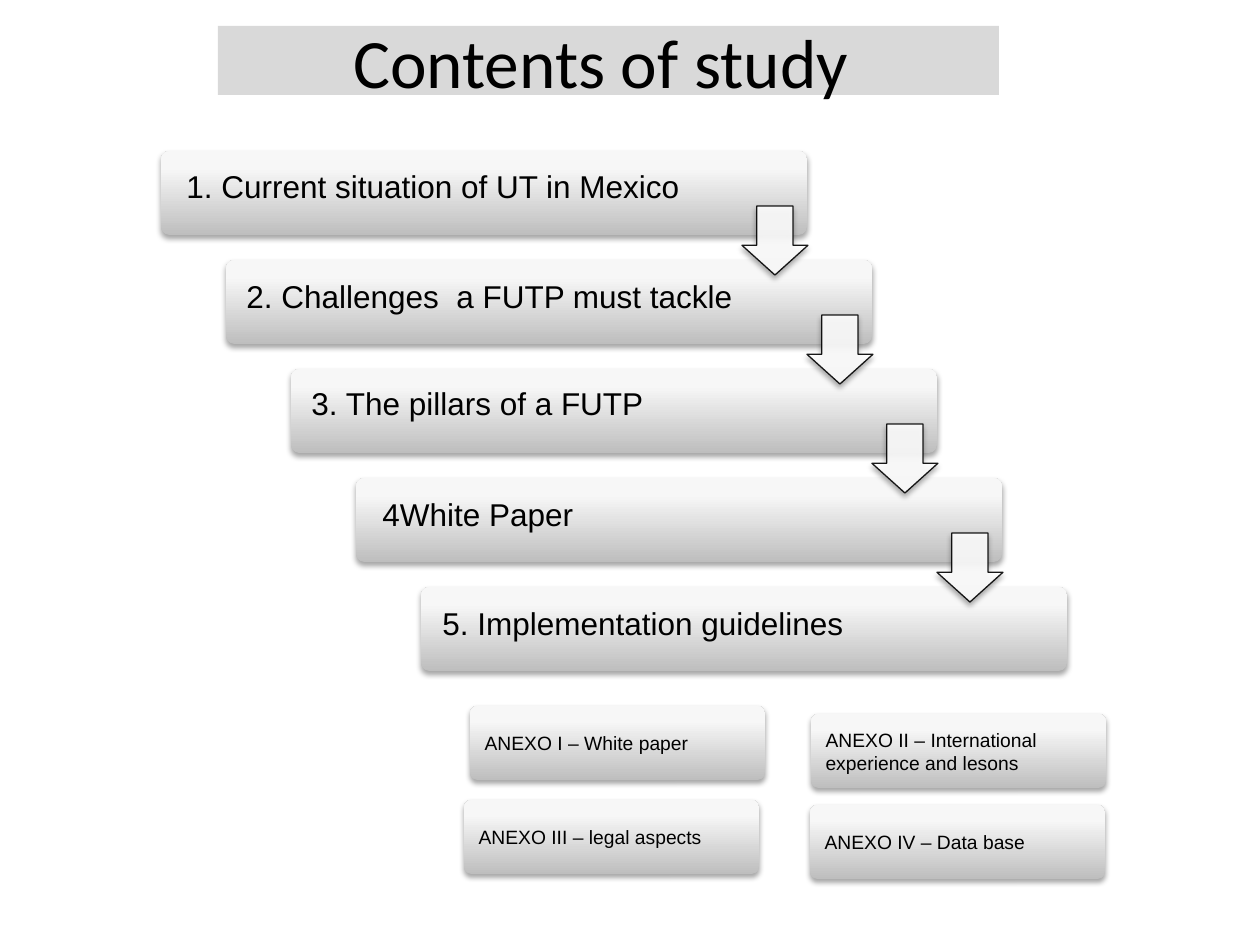
import pptx
import pptx.dml.color
import pptx.enum.shapes
import pptx.enum.text
import pptx.oxml
import pptx.oxml.ns
import pptx.util
from dataclasses import dataclass

SHAPE = pptx.enum.shapes.MSO_SHAPE
ALIGN = pptx.enum.text.PP_ALIGN
ANCHOR = pptx.enum.text.MSO_ANCHOR
EMU_PER_PX = 914400 / 126
NAMESPACE = pptx.oxml.ns.nsdecls("a")


@dataclass(frozen=True)
class Theme:
    ink: str = "000000"
    paper: str = "FFFFFF"
    title_fill: str = "D9D9D9"
    bar_stops: tuple = ((0, "BEBEBE"), (80, "F7F7F7"), (100, "F8F8F8"))
    arrow_opacity: int = 90
    shadow_opacity: int = 35
    title_font: str = "Calibri"
    body_font: str = "Arial"
    title_size: float = 39.6
    step_size: int = 18
    annex_size: int = 11


def px(length):
    return pptx.util.Emu(round(length * EMU_PER_PX))


def color(value):
    return pptx.dml.color.RGBColor.from_string(value)


class SlideBuilder:
    def __init__(self, page, theme):
        self.page = page
        self.theme = theme

    def shape(self, kind, left, top, width, height):
        shape = self.page.shapes.add_shape(kind, px(left), px(top), px(width), px(height))
        shape.line.fill.background()
        shape.shadow.inherit = False
        return shape

    def set_text(self, shape, text, size, font, align=ALIGN.LEFT, anchor=ANCHOR.MIDDLE):
        frame = shape.text_frame
        frame.word_wrap = True
        frame.vertical_anchor = anchor
        frame.text = text
        para = frame.paragraphs[0]
        para.alignment = align
        for span in para.runs:
            span.font.size = pptx.util.Pt(size)
            span.font.name = font
            span.font.color.rgb = color(self.theme.ink)

    def drop_shadow(self, shape):
        effects = shape.element.spPr.find(pptx.oxml.ns.qn("a:effectLst"))
        effects.append(pptx.oxml.parse_xml(
            f'<a:outerShdw {NAMESPACE} blurRad="{pptx.util.Pt(3.1)}" dist="{pptx.util.Pt(1.8)}" '
            f'dir="5400000" rotWithShape="0"><a:srgbClr val="{self.theme.ink}">'
            f'<a:alpha val="{self.theme.shadow_opacity * 1000}"/></a:srgbClr></a:outerShdw>'))

    def title(self, text, left, top, width, height):
        box = self.shape(SHAPE.RECTANGLE, left, top, width, height)
        box.fill.solid()
        box.fill.fore_color.rgb = color(self.theme.title_fill)
        self.set_text(box, text, self.theme.title_size, self.theme.title_font, ALIGN.CENTER)

    def bar(self, left, top, width, height):
        bar = self.shape(SHAPE.ROUNDED_RECTANGLE, left, top, width, height)
        bar.adjustments[0] = 0.1
        stops = "".join(f'<a:gs pos="{position * 1000}"><a:srgbClr val="{value}"/></a:gs>'
                        for position, value in self.theme.bar_stops)
        # The fill follows the transform and the geometry
        bar.element.spPr.insert(2, pptx.oxml.parse_xml(
            f'<a:gradFill {NAMESPACE} rotWithShape="1"><a:gsLst>{stops}</a:gsLst>'
            f'<a:lin ang="16200000" scaled="0"/></a:gradFill>'))
        self.drop_shadow(bar)
        return bar

    def arrow(self, left, top, width, height):
        arrow = self.shape(SHAPE.DOWN_ARROW, left, top, width, height)
        arrow.adjustments[0] = 0.55
        arrow.adjustments[1] = 0.45
        arrow.fill.solid()
        arrow.fill.fore_color.rgb = color(self.theme.paper)
        arrow.line.color.rgb = color(self.theme.ink)
        arrow.line.width = pptx.util.Pt(0.75)
        for tint in arrow.element.spPr.iter(pptx.oxml.ns.qn("a:srgbClr")):
            tint.append(pptx.oxml.parse_xml(
                f'<a:alpha {NAMESPACE} val="{self.theme.arrow_opacity * 1000}"/>'))
        self.drop_shadow(arrow)

    def label(self, text, left, top, width, height):
        box = self.page.shapes.add_textbox(px(left), px(top), px(width), px(height))
        self.set_text(box, text, self.theme.step_size, self.theme.body_font, anchor=ANCHOR.TOP)

    def annex(self, text, left, top):
        bar = self.bar(left, top, 295, 74)
        self.set_text(bar, text, self.theme.annex_size, self.theme.body_font)


# Step text with its label's left, top and width
STEPS = [
    ("1. Current situation of UT in Mexico", 174, 161, 630),
    ("2. Challenges  a FUTP must tackle", 234, 271, 568),
    ("3. The pillars of a FUTP", 299, 378, 522),
    ("4White Paper", 370, 489, 630),
    ("5. Implementation guidelines", 430, 598, 606),
]
ANNEXES = [
    ("ANEXO I – White paper", 470, 706),
    ("ANEXO II – International experience and lesons", 811, 714),
    ("ANEXO III – legal aspects", 464, 800),
    ("ANEXO IV – Data base", 810, 805),
]
STEP_RIGHT, STEP_DOWN = 65, 109


def main():
    deck = pptx.Presentation()
    deck.slide_width, deck.slide_height = px(1260), px(945)
    builder = SlideBuilder(deck.slides.add_slide(deck.slide_layouts[6]), Theme())

    builder.title("Contents of study ", 218, 26, 781, 69)

    # Staircase, drawn from the last step so each arrow overlaps the next bar
    for index, (text, left, top, width) in reversed(list(enumerate(STEPS))):
        right, down = index * STEP_RIGHT, index * STEP_DOWN
        builder.bar(161 + right, 151 + down, 646, 84)
        if index < len(STEPS) - 1:
            builder.arrow(742 + right, 206 + down, 66, 69)
        builder.label(text, left, top, width, 50)

    # Annexes
    for text, left, top in ANNEXES:
        builder.annex(text, left, top)

    deck.save("out.pptx")


if __name__ == "__main__":
    main()
